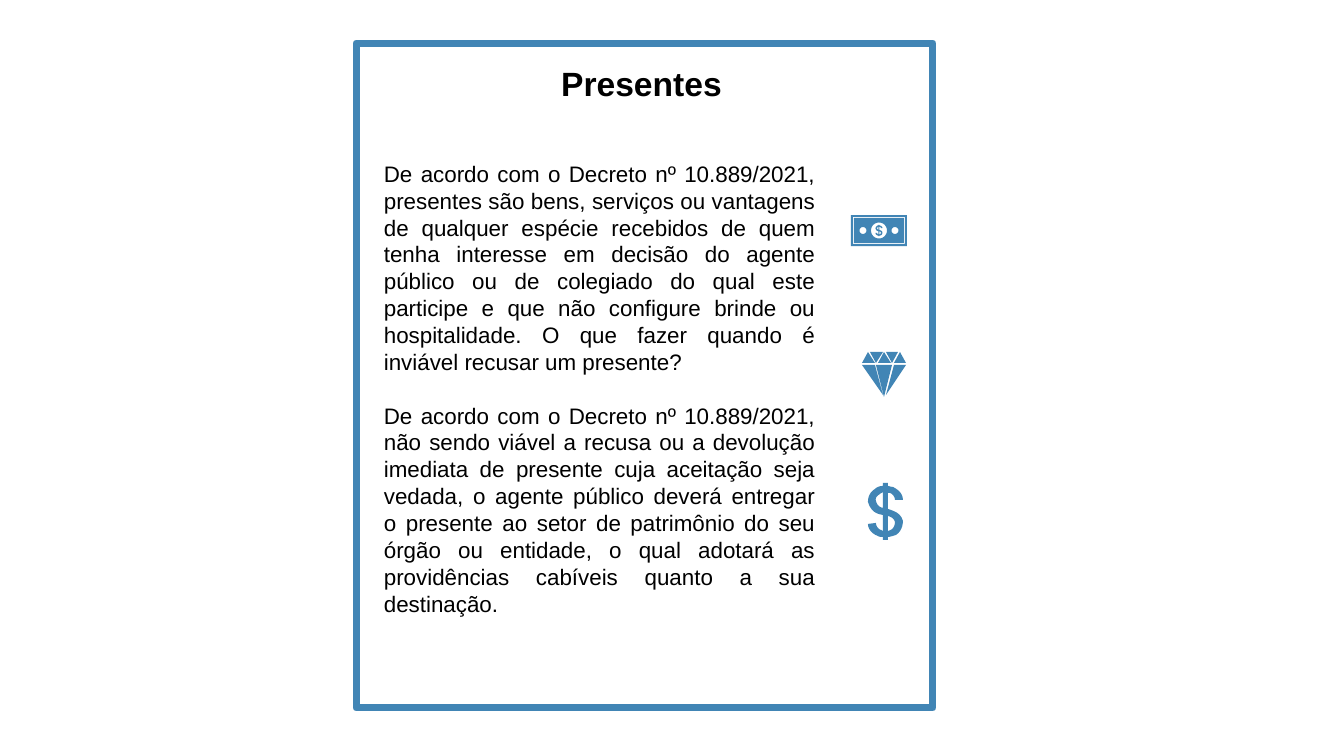
from math import cos, pi, sin

from pptx import Presentation
from pptx.dml.color import RGBColor
from pptx.enum.shapes import MSO_SHAPE
from pptx.enum.text import PP_ALIGN
from pptx.util import Pt

PX = 914400 / 100.8
BLUE = RGBColor.from_string("4185B5")
WHITE = RGBColor.from_string("FFFFFF")
BLACK = RGBColor.from_string("000000")


def flatten(outline, steps=6):
    """Turn points and six-number Bezier curves into a list of points."""
    pts = []
    for seg in outline:
        if len(seg) == 2:
            pts.append(seg)
            continue
        ctrl = [pts[-1], seg[:2], seg[2:4], seg[4:]]
        for i in range(1, steps + 1):
            t = i / steps
            w = ((1 - t) ** 3, 3 * t * (1 - t) ** 2, 3 * t * t * (1 - t), t ** 3)
            pts.append(tuple(sum(k * c[a] for k, c in zip(w, ctrl)) for a in (0, 1)))
    return pts


def add_icon(left, top, contours):
    fb = None
    for contour in contours:
        pts = [(x * PX, y * PX) for x, y in contour]
        if fb is None:
            fb = slide.shapes.build_freeform(*pts[0], scale=1.0)
        else:
            fb.move_to(*pts[0])
        fb.add_line_segments(pts[1:], close=True)
    s = fb.convert_to_shape(round(left * PX), round(top * PX))
    s.shadow.inherit = False
    s.fill.solid()
    s.fill.fore_color.rgb = BLUE
    s.line.fill.background()


prs = Presentation()
prs.slide_width, prs.slide_height = round(1344 * PX), round(756 * PX)
slide = prs.slides.add_slide(prs.slide_layouts[6])

# Frame
s = slide.shapes.add_shape(MSO_SHAPE.RECTANGLE, *(round(v * PX) for v in (356, 43, 577, 665)))
s.shadow.inherit = False
s.fill.solid()
s.fill.fore_color.rgb = WHITE
s.line.color.rgb = BLUE
s.line.width = Pt(5)

# Body and title
body = [
    "De acordo com o Decreto nº 10.889/2021, presentes são bens, serviços ou vantagens "
    "de qualquer espécie recebidos de quem tenha interesse em decisão do agente público "
    "ou de colegiado do qual este participe e que não configure brinde ou hospitalidade. "
    "O que fazer quando é inviável recusar um presente?",
    "De acordo com o Decreto nº 10.889/2021, não sendo viável a recusa ou a devolução "
    "imediata de presente cuja aceitação seja vedada, o agente público deverá entregar "
    "o presente ao setor de patrimônio do seu órgão ou entidade, o qual adotará as "
    "providências cabíveis quanto a sua destinação.",
]
texts = [
    ((374, 155, 451, 472), body, 16, False, PP_ALIGN.JUSTIFY),
    ((382, 58, 519, 50), ["Presentes"], 24, True, PP_ALIGN.CENTER),
]
for box, paragraphs, size, bold, align in texts:
    tf = slide.shapes.add_textbox(*(round(v * PX) for v in box)).text_frame
    tf.word_wrap = True
    line = Pt(size * 1.2)
    for i, text in enumerate(paragraphs):
        p = tf.add_paragraph() if i else tf.paragraphs[0]
        p.text = text
        p.alignment = align
        p.line_spacing = line
        p.space_after = line if i < len(paragraphs) - 1 else Pt(0)
        p.font.name = "Arial"
        p.font.size = Pt(size)
        p.font.bold = bold
        p.font.color.rgb = BLACK

# Dollar sign: outer outline, then its two counters
dollar = [flatten(outline) for outline in (
    [(15, 0), (20, 0), (20, 3), (21, 3, 23, 4, 25, 4), (31, 7, 35, 11, 35, 17), (27, 17),
     (27, 14, 25, 11, 22, 10), (21, 10, 20, 10, 20, 10), (20, 26),
     (26, 28, 33, 30, 35, 38), (35, 43, 33, 49, 28, 52), (25, 53, 22, 54, 20, 54),
     (20, 57), (15, 57), (15, 54), (13, 54, 11, 54, 10, 53), (4, 51, 0, 46, 0, 41),
     (8, 40), (8, 43, 10, 46, 13, 47), (14, 47, 14, 48, 15, 48), (15, 32),
     (9, 31, 3, 29, 0, 19), (0, 14, 2, 9, 7, 6), (9, 4, 12, 3, 15, 3)],
    [(20, 33), (20, 48), (21, 48, 22, 47, 23, 47), (26, 45, 27, 42, 27, 39),
     (26, 35, 23, 34, 20, 33)],
    [(15, 9), (14, 10, 13, 10, 12, 11), (9, 13, 7, 15, 8, 18), (9, 22, 11, 24, 15, 25)],
)]
add_icon(868, 483, dollar)

# Banknote: nested borders, three discs and a small dollar sign
borders = [[(m, m), (56 - m, m), (56 - m, 31 - m), (m, 31 - m)] for m in (0, 2, 3)]
discs = [[(cx + r * cos(k * pi / 16), 15.5 + r * sin(k * pi / 16)) for k in range(32)]
         for cx, r in ((12, 3.5), (28, 8), (44, 3.5))]
small_dollar = [[(24.5 + x * 0.2, 9.8 + y * 0.2) for x, y in pts] for pts in dollar]
add_icon(851, 215, borders + discs + small_dollar)

# Diamond: lower facets, then upper facets
add_icon(862, 352, [
    [(32, 13), (44, 13), (24, 43)],
    [(0, 13), (13, 13), (21, 43)],
    [(14, 13), (30, 13), (22, 45)],
    [(38, 0), (44, 11), (32, 11)],
    [(24, 0), (36, 0), (30, 11)],
    [(22, 0), (29, 11), (16, 11)],
    [(8, 0), (21, 0), (14, 11)],
    [(6, 0), (13, 11), (0, 11)],
])

prs.save("out.pptx")
